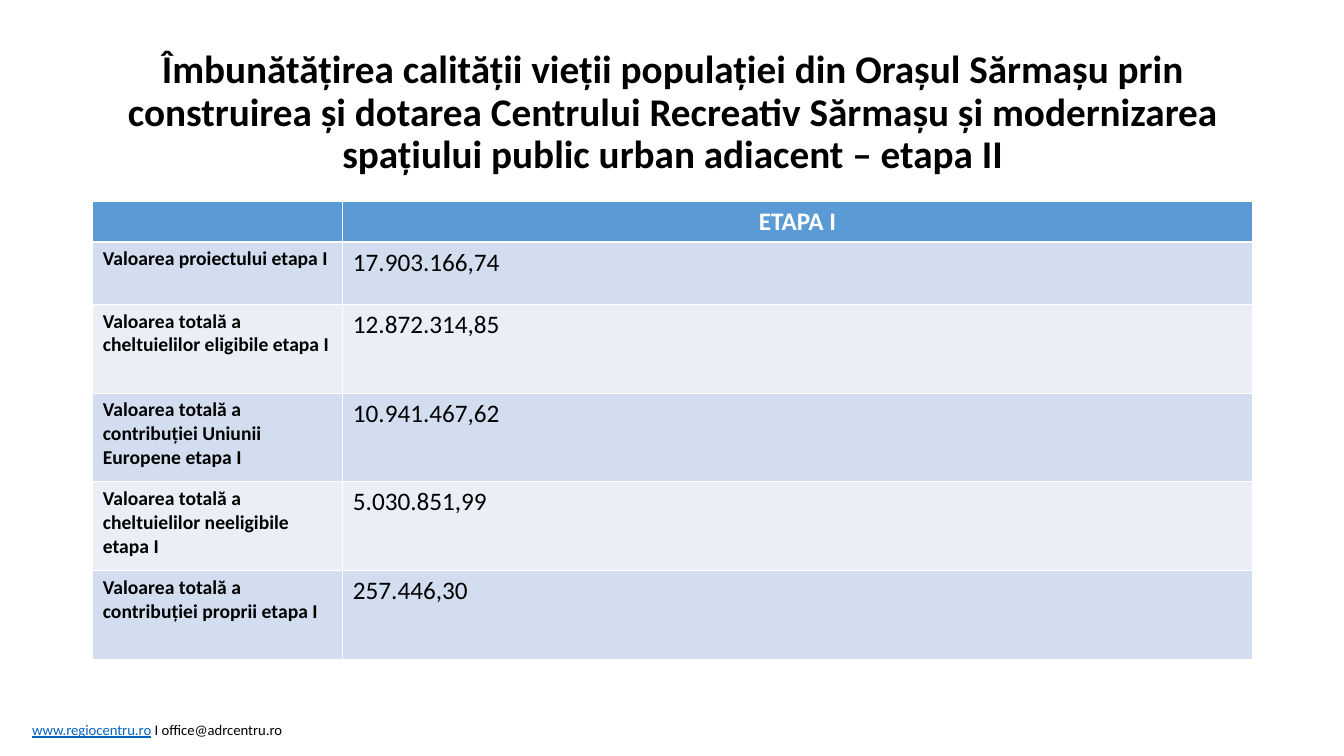
import pptx
import pptx.util
import pptx.dml.color
import pptx.enum.text

TITLE = ("Îmbunătățirea calității vieții populației din Orașul Sărmașu prin "
         "construirea și dotarea Centrului Recreativ Sărmașu și modernizarea "
         "spațiului public urban adiacent – etapa II")
ROWS = [
    ("", "ETAPA I"),
    ("Valoarea proiectului etapa I", "17.903.166,74"),
    ("Valoarea totală a cheltuielilor eligibile etapa I", "12.872.314,85"),
    ("Valoarea totală a contribuției Uniunii Europene etapa I", "10.941.467,62"),
    ("Valoarea totală a cheltuielilor neeligibile etapa I", "5.030.851,99"),
    ("Valoarea totală a contribuției proprii etapa I", "257.446,30"),
]
WEBSITE, CONTACT = "www.regiocentru.ro", " I office@adrcentru.ro"

RGBColor = pptx.dml.color.RGBColor
BLACK = RGBColor(0x00, 0x00, 0x00)
WHITE = RGBColor(0xFF, 0xFF, 0xFF)
LINK_BLUE = RGBColor(0x05, 0x63, 0xC1)
HEADER_BLUE = RGBColor(0x5B, 0x9B, 0xD5)
BANDS = [RGBColor(0xEA, 0xEF, 0xF7), RGBColor(0xD2, 0xDE, 0xEF)]

FONT = "Calibri"
CENTER = pptx.enum.text.PP_ALIGN.CENTER
Inches = pptx.util.Inches
WIDTH, HEIGHT = 13.33, 7.5
MARGIN = 0.92
CONTENT_WIDTH = 11.5
LABEL_WIDTH = 2.48
COLUMN_WIDTHS = [LABEL_WIDTH, CONTENT_WIDTH - LABEL_WIDTH]
ROW_HEIGHTS = [0.38, 0.62] + [0.88] * (len(ROWS) - 2)


def set_font(font, size, color, bold=False):
    font.name = FONT
    font.size = pptx.util.Pt(size)
    font.color.rgb = color
    font.bold = bold


def add_text_box(slide, left, top, width, height):
    box = slide.shapes.add_textbox(*map(Inches, (left, top, width, height)))
    box.text_frame.word_wrap = True
    return box.text_frame


def add_footer(slide):
    paragraph = add_text_box(slide, 0.22, 7.1, 2.78, 0.28).paragraphs[0]
    for text, color, underline in ((WEBSITE, LINK_BLUE, True), (CONTACT, BLACK, False)):
        run = paragraph.add_run()
        run.text = text
        set_font(run.font, 10.5, color)
        run.font.underline = underline


def add_title(slide):
    frame = add_text_box(slide, MARGIN, 0.4, CONTENT_WIDTH, 1.45)
    frame.vertical_anchor = pptx.enum.text.MSO_ANCHOR.MIDDLE
    paragraph = frame.paragraphs[0]
    paragraph.text = TITLE
    paragraph.alignment = CENTER
    paragraph.line_spacing = 0.9
    set_font(paragraph.font, 28, BLACK, True)


def add_values_table(slide):
    table = slide.shapes.add_table(
        len(ROWS), len(COLUMN_WIDTHS), Inches(MARGIN), Inches(2),
        Inches(CONTENT_WIDTH), Inches(sum(ROW_HEIGHTS))).table
    for column, width in zip(table.columns, COLUMN_WIDTHS):
        column.width = Inches(width)
    for row_index, (row, height) in enumerate(zip(table.rows, ROW_HEIGHTS)):
        row.height = Inches(height)
        is_header = row_index == 0
        for column_index, cell in enumerate(row.cells):
            is_label = column_index == 0
            cell.fill.solid()
            cell.fill.fore_color.rgb = HEADER_BLUE if is_header else BANDS[row_index % 2]
            paragraph = cell.text_frame.paragraphs[0]
            paragraph.text = ROWS[row_index][column_index]
            if is_header:
                paragraph.alignment = CENTER
            set_font(paragraph.font, 14 if is_label and not is_header else 18,
                     WHITE if is_header else BLACK, is_header or is_label)


def main():
    presentation = pptx.Presentation()
    presentation.slide_width = Inches(WIDTH)
    presentation.slide_height = Inches(HEIGHT)
    slide = presentation.slides.add_slide(presentation.slide_layouts[6])
    add_footer(slide)
    add_title(slide)
    add_values_table(slide)
    presentation.save("out.pptx")


if __name__ == "__main__":
    main()
